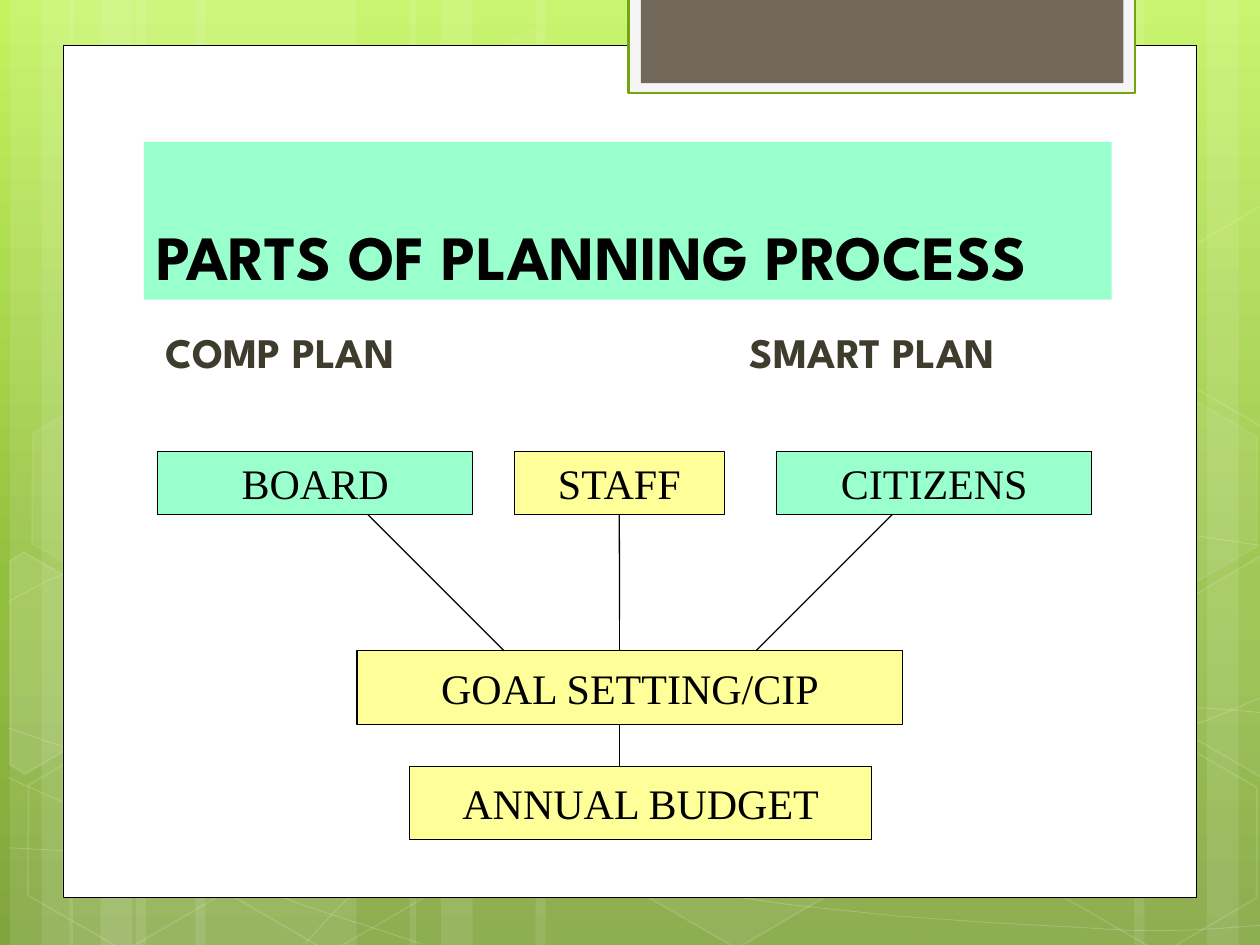
from copy import deepcopy
from math import cos, radians, sin

from lxml import etree
from pptx import Presentation
from pptx.dml.color import RGBColor
from pptx.enum.shapes import MSO_CONNECTOR, MSO_SHAPE
from pptx.enum.text import MSO_ANCHOR, PP_ALIGN
from pptx.oxml.ns import qn
from pptx.util import Cm, Pt

RECT, HEXAGON = MSO_SHAPE.RECTANGLE, MSO_SHAPE.HEXAGON
STRAIGHT = MSO_CONNECTOR.STRAIGHT
MIDDLE, BOTTOM, TOP = MSO_ANCHOR.MIDDLE, MSO_ANCHOR.BOTTOM, MSO_ANCHOR.TOP
LEFT, CENTER = PP_ALIGN.LEFT, PP_ALIGN.CENTER

THEME = {
    "sky": [(0, "C3F35F"), (0.62, "93BF3F"), (1, "81A53E")],
    "white": "FFFFFF", "black": "000000", "frame": "F5F5F5",
    "green": "74A510", "brown": "71685A", "mint": "99FFCC",
    "yellow": "FFFF99", "olive": "3E3D2D",
    "title": {"name": "League Spartan", "size": Pt(36), "bold": True},
    "heading": {"name": "League Spartan", "size": Pt(24), "bold": True},
    "label": {"name": "Times New Roman", "size": Pt(24), "bold": False},
}


def paint(sp, fill=None, line=None, width=0.75, fill_alpha=100, line_alpha=100):
    sp.shadow.inherit = False
    for fmt, color, alpha in ((sp.fill, fill, fill_alpha), (sp.line.fill, line, line_alpha)):
        if color is None or alpha == 0:
            fmt.background()
            continue
        fmt.solid()
        fmt.fore_color.rgb = RGBColor.from_string(THEME[color])
        if alpha < 100:
            holder = sp._element.spPr if fmt is sp.fill else sp.line._ln
            clr = holder.find(qn("a:solidFill"))[0]
            etree.SubElement(clr, qn("a:alpha")).set("val", str(alpha * 1000))
    if line:
        sp.line.width = Pt(width)


def write(sp, text, style, color, align, anchor, wrap):
    tf = sp.text_frame
    for name, value in {"word_wrap": wrap, "vertical_anchor": anchor}.items():
        setattr(tf, name, value)
    p = tf.paragraphs[0]
    p.alignment = align
    r = p.add_run()
    r.text = text
    for name, value in THEME[style].items():
        setattr(r.font, name, value)
    r.font.color.rgb = RGBColor.from_string(THEME[color])
    return p


prs = Presentation()
prs.slide_width, prs.slide_height = Cm(25.4), Cm(19.05)
s = prs.slides.add_slide(prs.slide_layouts[6])

bg = s.background.fill
bg.gradient()
bg.gradient_angle = 270
stops = next(s._element.iter(qn("a:gsLst")))
stops.insert(1, deepcopy(stops[0]))
for stop, (position, color) in zip(bg.gradient_stops, THEME["sky"]):
    stop.position = position
    stop.color.rgb = RGBColor.from_string(color)

strips = [
    (2.74, 4.45), (0.2, 1.27), (0.84, 2.11), (3.94, 4.45), (1.4, 1.27), (2.03, 2.11),
    (18.62, 4.45), (24.33, 1.27), (22.86, 2.11), (10.8, 7.82), (8.26, 1.27), (8.89, 2.11),
]
for x, w in strips:
    sp = s.shapes.add_shape(RECT, Cm(x), 0, Cm(w), prs.slide_height)
    paint(sp, "white", fill_alpha=10)

curves = [
    [(0.18, 17.09), (1.55, 17.17), (2.92, 17.25), (4.83, 17.22), (6.73, 17.2),
     (9.09, 17.15), (11.63, 16.89), (14.17, 16.64), (17.78, 16.15), (20.12, 15.67),
     (22.43, 15.19), (24.82, 14.43), (25.58, 14)],
    [(0.18, 12.12), (0.91, 11.71), (1.65, 11.33), (3.07, 10.95), (4.52, 10.57),
     (6.58, 10.01), (8.81, 9.83), (11.07, 9.65), (13.82, 9.63), (16.61, 9.83),
     (19.41, 10.03), (24.05, 10.82), (25.58, 11.02)],
    [(0.15, 15.67), (3.23, 17.07), (6.27, 18.47), (8.48, 19.02)],
    [(0.18, 14.68), (0.97, 14.96), (1.78, 15.24), (3.25, 15.65), (4.72, 16.03),
     (6.93, 16.66), (9.07, 17.09), (11.18, 17.53), (13.84, 17.98), (15.95, 18.24),
     (18.06, 18.52), (20.32, 18.62), (21.67, 18.69), (22.99, 18.8), (23.34, 18.75),
     (24, 18.75), (24.66, 18.72), (25.12, 18.67), (25.58, 18.64)],
    [(6.15, 19.02), (6.6, 18.52), (7.06, 18.01), (7.67, 17.55), (8.28, 17.09),
     (9.14, 16.59), (9.86, 16.23), (10.57, 15.88), (11, 15.72), (11.94, 15.47),
     (12.85, 15.21), (14.55, 14.86), (15.44, 14.68), (16.36, 14.5), (16.48, 14.5),
     (17.27, 14.45), (18.06, 14.38), (19.3, 14.3), (20.17, 14.27), (21.06, 14.25),
     (22.5, 14.27), (22.5, 14.27), (23.07, 14.27), (23.64, 14.27), (24.21, 14.27),
     (24.66, 14.3), (25.1, 14.33), (25.55, 14.38)],
]
STEPS = 3
for knots in curves:
    points = []
    for i in range(0, len(knots) - 1, 3):
        for t in (n / STEPS for n in range(1, STEPS + 1)):
            weights = ((1 - t) ** 3, 3 * t * (1 - t) ** 2, 3 * t * t * (1 - t), t ** 3)
            points.append([Cm(sum(w * k[axis] for w, k in zip(weights, knots[i:i + 4])))
                           for axis in (0, 1)])
    fb = s.shapes.build_freeform(Cm(knots[0][0]), Cm(knots[0][1]))
    fb.add_line_segments(points, close=False)
    paint(fb.convert_to_shape(), line="white", width=0.5, line_alpha=20)

TILT = 30
hexagons = [
    (8.48, 0.91, 4, 8), (12.62, 14.96, 6, 12), (0.28, 15.01, 0, 12), (0.36, 7.92, 7, 8),
    (4.42, 15.04, 0, 12), (19.13, 11.51, 10, 12), (21.18, 15.06, 0, 12), (21.18, 7.98, 7, 8),
]
for x, y, fill_alpha, line_alpha in hexagons:
    sp = s.shapes.add_shape(HEXAGON, Cm(x), Cm(y), Cm(4.45), Cm(3.86))
    sp.rotation = TILT
    sp.adjustments[0] = 0.285
    paint(sp, "white", "white", 1, fill_alpha, line_alpha)

cut_hexagons = [
    (10, 0.91, 13.59, [(0.2, 11.3), (0.48, 11.13), (2.44, 12.24), (2.41, 14.48),
                       (0.51, 15.6), (0.2, 15.42)]),
    (4, 25.02, 13.21, [(23.52, 12.32), (25.43, 11.2), (25.63, 11.33), (25.63, 15.57),
                       (25.45, 15.67), (23.52, 14.55)]),
    (0, 25.02, 6.12, [(23.52, 5.26), (25.43, 4.14), (25.65, 4.27), (25.63, 8.51),
                      (25.45, 8.61), (23.52, 7.49)]),
]
ca, sa = cos(radians(TILT)), sin(radians(TILT))
for fill_alpha, cx, cy, corners in cut_hexagons:
    first, *rest = [(Cm(cx + ca * (x - cx) + sa * (y - cy)),
                     Cm(cy - sa * (x - cx) + ca * (y - cy))) for x, y in corners]
    fb = s.shapes.build_freeform(*first)
    fb.add_line_segments(rest, close=True)
    sp = fb.convert_to_shape()
    sp.rotation = TILT
    paint(sp, "white", "white", 1, fill_alpha, 12)

panels = [
    (1.27, 0.91, 22.86, 17.19, "white", "black", 0.5),
    (12.67, -0.05, 10.21, 1.93, "frame", "green", 1.25),
    (12.92, -0.05, 9.73, 1.73, "brown", None, 0),
]
for x, y, w, h, fill, line, width in panels:
    sp = s.shapes.add_shape(RECT, Cm(x), Cm(y), Cm(w), Cm(h))
    paint(sp, fill, line, width)

title = s.shapes.add_textbox(Cm(2.9), Cm(2.86), Cm(19.51), Cm(3.18))
paint(title, "mint")
write(title, "PARTS OF PLANNING PROCESS", "title", "black", LEFT, BOTTOM, True)

plans = s.shapes.add_textbox(Cm(2.9), Cm(6.45), Cm(18.82), Cm(9.75))
plans.text_frame.margin_left = Cm(0.43)
p = write(plans, "COMP PLAN\tSMART PLAN", "heading", "olive", LEFT, TOP, True)
p.space_before = Pt(4.8)
tabs = etree.SubElement(p._p.get_or_add_pPr(), qn("a:tabLst"))
tab = etree.SubElement(tabs, qn("a:tab"))
tab.set("pos", str(Cm(11.79)))
tab.set("algn", "l")

boxes = [
    ("STAFF", 10.37, 9.1, 4.23, 1.27, "yellow"),
    ("BOARD", 3.18, 9.1, 6.35, 1.27, "mint"),
    ("CITIZENS", 15.66, 9.1, 6.35, 1.27, "mint"),
    ("GOAL SETTING/CIP", 7.2, 13.12, 11, 1.48, "yellow"),
    ("ANNUAL BUDGET", 8.26, 15.45, 9.31, 1.48, "yellow"),
]
shapes = {}
for text, x, y, w, h, fill in boxes:
    sp = shapes[text] = s.shapes.add_shape(RECT, Cm(x), Cm(y), Cm(w), Cm(h))
    paint(sp, fill, "black")
    write(sp, text, "label", "black", CENTER, MIDDLE, False)

links = [
    (12.49, 10.37, 12.49, 12.49, "STAFF"),
    (7.41, 10.37, 10.16, 13.12, None),
    (17.99, 10.37, 15.24, 13.12, None),
    (12.49, 12.28, 12.49, 13.12, None),
    (12.49, 14.6, 12.49, 15.45, None),
]
for x1, y1, x2, y2, source in links:
    c = s.shapes.add_connector(STRAIGHT, Cm(x1), Cm(y1), Cm(x2), Cm(y2))
    c.line.color.rgb = RGBColor.from_string(THEME["black"])
    c.line.width = Pt(0.75)
    etree.SubElement(c._element.spPr, qn("a:effectLst"))
    if source:
        c.begin_connect(shapes[source], 2)

prs.save("out.pptx")
